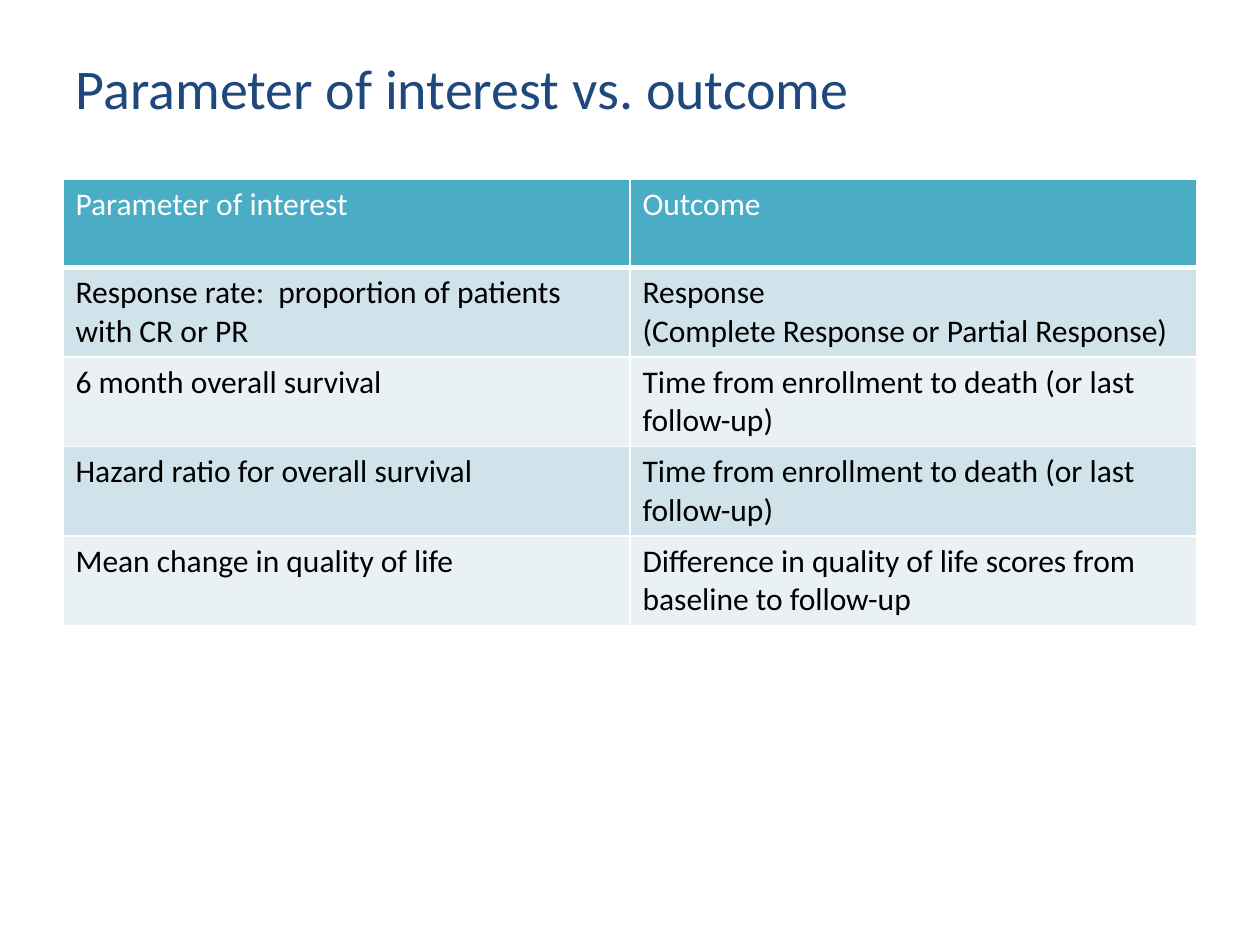
from dataclasses import dataclass

from lxml import etree
from pptx import Presentation
from pptx.dml.color import RGBColor
from pptx.enum.text import MSO_ANCHOR, PP_ALIGN
from pptx.oxml.ns import qn
from pptx.slide import Slide
from pptx.table import _Cell
from pptx.text.text import TextFrame
from pptx.util import Cm, Pt

LEFT = PP_ALIGN.LEFT
TOP, MIDDLE = MSO_ANCHOR.TOP, MSO_ANCHOR.MIDDLE


@dataclass(frozen=True)
class Theme:
    font: str = "Calibri"
    title_size: int = 32
    body_size: int = 18
    title_color: str = "1F497D"
    header_color: str = "FFFFFF"
    body_color: str = "000000"
    header_fill: str = "4BACC6"
    band_fills: tuple[str, str] = ("D0E3EA", "E9F1F5")
    border_color: str = "FFFFFF"
    border_width: int = 1
    header_rule_width: int = 3


@dataclass(frozen=True)
class Measure:
    parameter: str
    outcome: str


THEME = Theme()
MARGIN, CONTENT_WIDTH = Cm(1.27), Cm(22.86)
TITLE_TOP, TITLE_HEIGHT = Cm(0.76), Cm(1.98)
TABLE_TOP, ROW_HEIGHT = Cm(3.61), Cm(1.78)

MEASURES = [
    Measure("Parameter of interest", "Outcome"),
    Measure("Response rate:  proportion of patients with CR or PR",
            "Response\n(Complete Response or Partial Response)"),
    Measure("6 month overall survival",
            "Time from enrollment to death (or last follow-up)"),
    Measure("Hazard ratio for overall survival",
            "Time from enrollment to death (or last follow-up)"),
    Measure("Mean change in quality of life",
            "Difference in quality of life scores from baseline to follow-up"),
]


def write_text(frame: TextFrame, text: str, size: int, color: str) -> None:
    frame.text = text
    font_format = {"name": THEME.font, "size": Pt(size), "bold": False}
    for paragraph in frame.paragraphs:
        paragraph.alignment = LEFT
        for run in paragraph.runs:
            for attribute, value in font_format.items():
                setattr(run.font, attribute, value)
            run.font.color.rgb = RGBColor.from_string(color)


def draw_borders(cell: _Cell, bottom_width: int) -> None:
    """Add the four cell lines; they must come before the cell's fill."""
    properties = cell._tc.get_or_add_tcPr()
    widths = dict.fromkeys(("lnL", "lnR", "lnT"), THEME.border_width)
    widths["lnB"] = bottom_width
    for side, width in widths.items():
        line = etree.SubElement(properties, qn(f"a:{side}"), w=str(Pt(width)))
        fill = etree.SubElement(line, qn("a:solidFill"))
        etree.SubElement(fill, qn("a:srgbClr"), val=THEME.border_color)


def draw_cell(cell: _Cell, text: str, row: int) -> None:
    is_header = row == 0
    color = THEME.header_color if is_header else THEME.body_color
    fill = THEME.header_fill if is_header else THEME.band_fills[(row - 1) % 2]
    write_text(cell.text_frame, text, THEME.body_size, color)
    cell.vertical_anchor = TOP
    draw_borders(cell, THEME.header_rule_width if is_header else THEME.border_width)
    cell.fill.solid()
    cell.fill.fore_color.rgb = RGBColor.from_string(fill)


def draw_title(slide: Slide, text: str) -> None:
    title = slide.shapes.title
    placement = {"left": MARGIN, "top": TITLE_TOP,
                 "width": CONTENT_WIDTH, "height": TITLE_HEIGHT}
    for attribute, value in placement.items():
        setattr(title, attribute, value)
    title.text_frame.vertical_anchor = MIDDLE
    write_text(title.text_frame, text, THEME.title_size, THEME.title_color)


def draw_measures(slide: Slide, measures: list[Measure]) -> None:
    table = slide.shapes.add_table(
        len(measures), 2, MARGIN, TABLE_TOP,
        CONTENT_WIDTH, ROW_HEIGHT * len(measures)).table
    for row, measure in enumerate(measures):
        for column, text in enumerate((measure.parameter, measure.outcome)):
            draw_cell(table.cell(row, column), text, row)


def main() -> None:
    presentation = Presentation()
    presentation.slide_width, presentation.slide_height = Cm(25.4), Cm(19.05)
    title_only = presentation.slide_layouts[5]
    slide = presentation.slides.add_slide(title_only)
    draw_title(slide, "Parameter of interest vs. outcome")
    draw_measures(slide, MEASURES)
    presentation.save("out.pptx")


if __name__ == "__main__":
    main()
